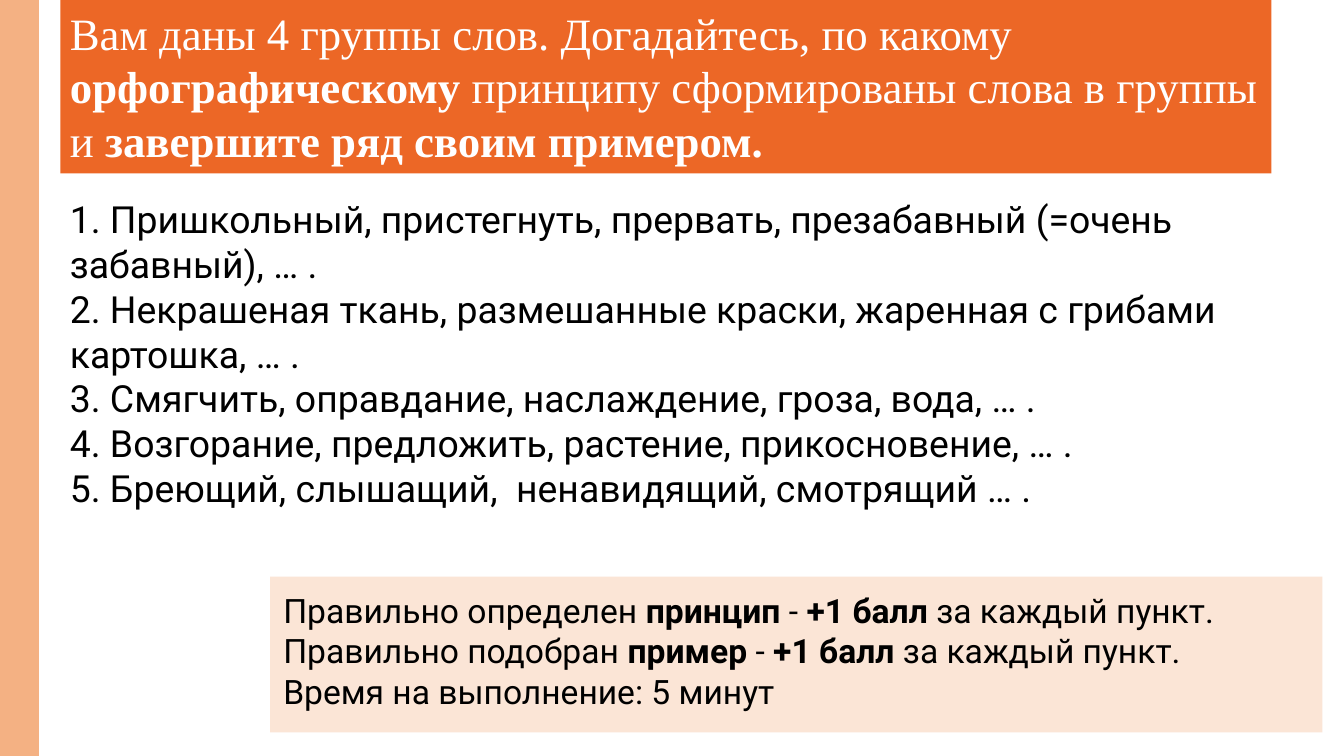
"""Build a spelling warm-up slide with a task, word groups and scoring rules."""
import pptx
import pptx.util
import pptx.dml.color
import pptx.enum.shapes
import pptx.enum.text
import pptx.oxml.ns
import lxml.etree

WIDTH = 10
HEIGHT = WIDTH * 9 / 16
LEFT, CONTENT_WIDTH = 0.45, 9.01

# Each paragraph is a list of (text, bold) pieces.
TASK = [[
    ("Вам даны 4 группы слов. Догадайтесь, по какому ", False),
    ("орфографическому ", True),
    ("принципу сформированы слова в группы и ", False),
    ("завершите ряд своим примером.", True),
]]
WORD_GROUPS = [
    "Пришкольный, пристегнуть, прервать, презабавный (=очень забавный), … .",
    "Некрашеная ткань, размешанные краски, жаренная с грибами картошка, … .",
    "Смягчить, оправдание, наслаждение, гроза, вода, … .",
    "Возгорание, предложить, растение, прикосновение, … .",
    "Бреющий, слышащий,  ненавидящий, смотрящий … .",
]
SCORED = [("определен", "принцип"), ("подобран", "пример")]
TIME_LIMIT = "Время на выполнение: 5 минут"


def color(code):
    return pptx.dml.color.RGBColor.from_string(code)


def place(part, left, top, width, height, fill):
    part.left, part.top, part.width, part.height = (
        pptx.util.Inches(length) for length in (left, top, width, height))
    part.fill.solid()
    part.fill.fore_color.rgb = color(fill)


def write(part, paragraphs, size, font="Roboto", ink="000000", inset=(0.07, 0.04)):
    frame = part.text_frame
    frame.word_wrap = True
    frame.auto_size = pptx.enum.text.MSO_AUTO_SIZE.NONE
    frame.vertical_anchor = pptx.enum.text.MSO_ANCHOR.TOP
    frame.margin_left = frame.margin_right = pptx.util.Inches(inset[0])
    frame.margin_top = frame.margin_bottom = pptx.util.Inches(inset[1])
    for number, pieces in enumerate(paragraphs):
        paragraph = frame.add_paragraph() if number else frame.paragraphs[0]
        paragraph.alignment = pptx.enum.text.PP_ALIGN.LEFT
        paragraph.line_spacing = 1.0
        paragraph.space_before = paragraph.space_after = pptx.util.Pt(0)
        properties = paragraph._p.get_or_add_pPr()
        properties.set("marL", "0")
        properties.set("indent", "0")
        lxml.etree.SubElement(properties, pptx.oxml.ns.qn("a:buNone"))
        for text, bold in pieces:
            run = paragraph.add_run()
            run.text = text
            run.font.name, run.font.bold = font, bold
            run.font.size = pptx.util.Pt(size)
            run.font.color.rgb = color(ink)


def main():
    deck = pptx.Presentation()
    deck.slide_width = pptx.util.Inches(WIDTH)
    deck.slide_height = pptx.util.Inches(HEIGHT)
    slide = deck.slides.add_slide(deck.slide_layouts[1])

    task = slide.shapes.title
    place(task, LEFT, 0, CONTENT_WIDTH, 1.29, "EC6726")
    write(task, TASK, 24, font="Times New Roman", ink="FFFFFF")

    word_groups = slide.placeholders[1]
    place(word_groups, LEFT, 1.42, CONTENT_WIDTH, 2.55, "FFFFFF")
    write(word_groups, [[(f"{number}. {words}", False)]
                        for number, words in enumerate(WORD_GROUPS, 1)], 20)

    scoring = slide.shapes.add_textbox(0, 0, 0, 0)
    place(scoring, 2.01, 4.29, 7.83, 1.16, "FBE5D6")
    rules = [[(f"Правильно {action} ", False), (subject, True), (" - ", False),
              ("+1 балл ", True), ("за каждый пункт.", False)]
             for action, subject in SCORED]
    write(scoring, rules + [[(TIME_LIMIT, False)]], 18, inset=(0.1, 0.1))

    side_band = slide.shapes.add_shape(
        pptx.enum.shapes.MSO_SHAPE.RECTANGLE, 0, 0, 0, 0)
    place(side_band, 0, 0, 0.29, HEIGHT, "F4B183")
    side_band.line.fill.background()
    side_band.shadow.inherit = False

    deck.save("out.pptx")


if __name__ == "__main__":
    main()
